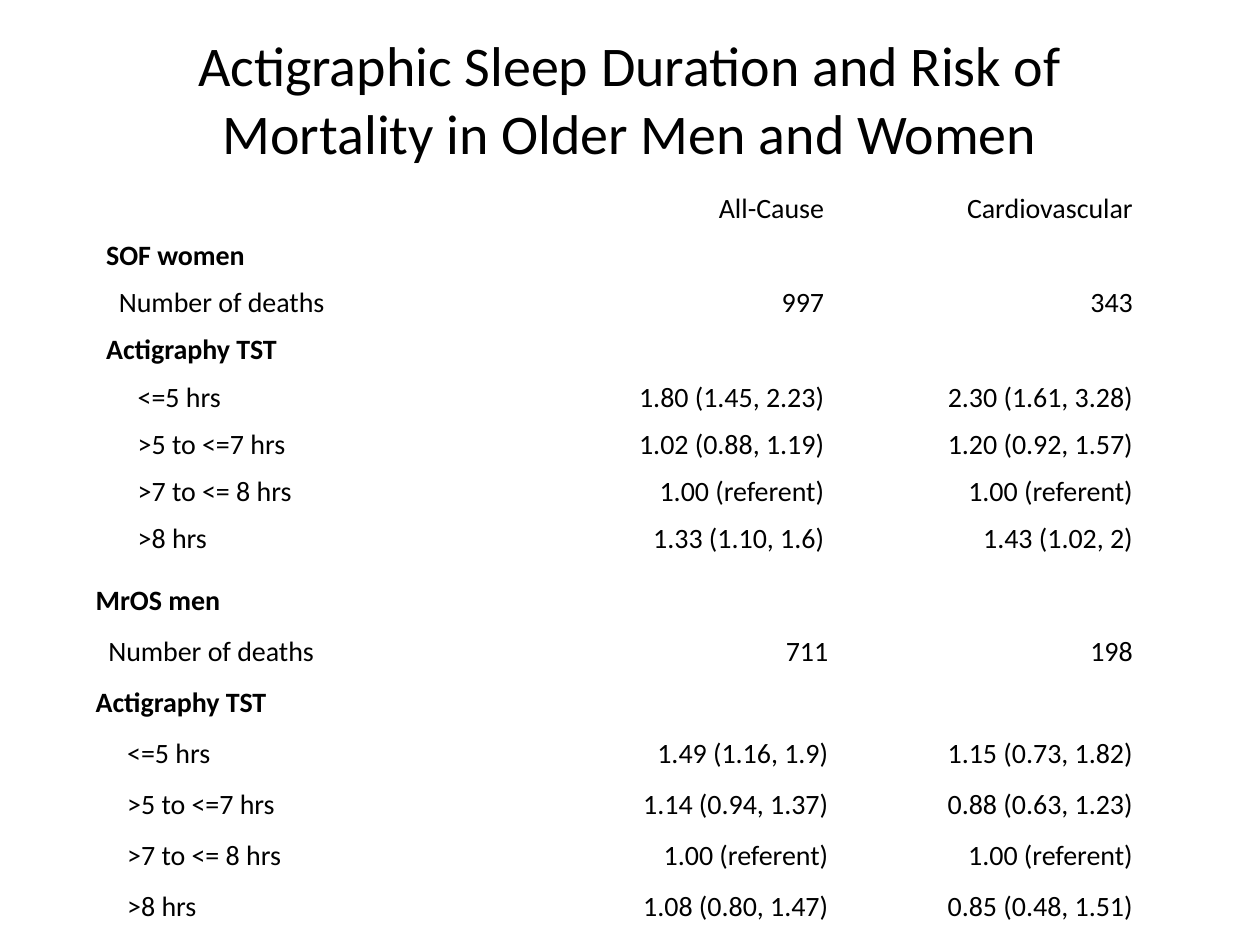
"""Build the slide on actigraphic sleep duration and risk of mortality."""
from dataclasses import dataclass

from pptx import Presentation
from pptx.dml.color import RGBColor
from pptx.enum.text import MSO_ANCHOR as Anchor, MSO_AUTO_SIZE as Fit, PP_ALIGN as Align
from pptx.util import Pt


@dataclass(frozen=True)
class Theme:
    ink: RGBColor = RGBColor(0, 0, 0)
    font: str = "Calibri"
    title: int = 32
    body: int = 16


theme = Theme()


def style(part, size, bold=False):
    for run in part.runs:
        run.font.name = theme.font
        run.font.size = Pt(size)
        run.font.bold = bold
        run.font.color.rgb = theme.ink


HEAD, COUNT, LEVEL = 0, 7.2, 18

women = [
    (HEAD, "", "All-Cause", "Cardiovascular"),
    (HEAD, "SOF women", "", ""),
    (COUNT, "Number of deaths", "997", "343"),
    (HEAD, "Actigraphy TST", "", ""),
    (LEVEL, "<=5 hrs", "1.80 (1.45, 2.23)", "2.30 (1.61, 3.28)"),
    (LEVEL, ">5 to <=7 hrs", "1.02 (0.88, 1.19)", "1.20 (0.92, 1.57)"),
    (LEVEL, ">7 to <= 8 hrs", "1.00 (referent)", "1.00 (referent)"),
    (LEVEL, ">8 hrs", "1.33 (1.10, 1.6)", "1.43 (1.02, 2)"),
]
men = [
    (HEAD, "MrOS men", "", ""),
    (COUNT, "Number of deaths", "711", "198"),
    (HEAD, "Actigraphy TST", "", ""),
    (LEVEL, "<=5 hrs", "1.49 (1.16, 1.9)", "1.15 (0.73, 1.82)"),
    (LEVEL, ">5 to <=7 hrs", "1.14 (0.94, 1.37)", "0.88 (0.63, 1.23)"),
    (LEVEL, ">7 to <= 8 hrs", "1.00 (referent)", "1.00 (referent)"),
    (LEVEL, ">8 hrs", "1.08 (0.80, 1.47)", "0.85 (0.48, 1.51)"),
]
groups = [
    (women, 60, 102, (235.2, 176.4, 176.4), 27),
    (men, 54, 324, (226, 194, 174), 29.14),
]

deck = Presentation()
deck.slide_width, deck.slide_height = Pt(720), Pt(540)
slide = deck.slides.add_slide(deck.slide_layouts[5])

title = slide.shapes.title
title.left, title.top, title.width, title.height = Pt(48), Pt(20), Pt(624), Pt(72)
frame = title.text_frame
frame.text = "Actigraphic Sleep Duration and Risk of Mortality in Older Men and Women"
frame.word_wrap = True
frame.auto_size = Fit.NONE
frame.vertical_anchor = Anchor.MIDDLE
frame.paragraphs[0].alignment = Align.CENTER
style(frame.paragraphs[0], theme.title)

for rows, left, top, widths, height in groups:
    table = slide.shapes.add_table(
        len(rows), len(widths), Pt(left), Pt(top), Pt(sum(widths)), Pt(height * len(rows))
    ).table
    table.first_row = table.horz_banding = False
    for col, width in zip(table.columns, widths):
        col.width = Pt(width)
    for row, (indent, *texts) in zip(table.rows, rows):
        row.height = Pt(height)
        for col, (cell, text) in enumerate(zip(row.cells, texts)):
            cell.fill.background()
            cell.vertical_anchor = Anchor.BOTTOM
            cell.margin_left = Pt(0.7 if col else 0.7 + indent)
            cell.margin_right = cell.margin_top = Pt(0.7)
            cell.margin_bottom = Pt(0)
            part = cell.text_frame.paragraphs[0]
            part.text = text
            part.font.size = Pt(theme.body)
            part.alignment = Align.RIGHT if col else Align.LEFT
            style(part, theme.body, bold=col == 0 and indent == HEAD)

deck.save("out.pptx")
